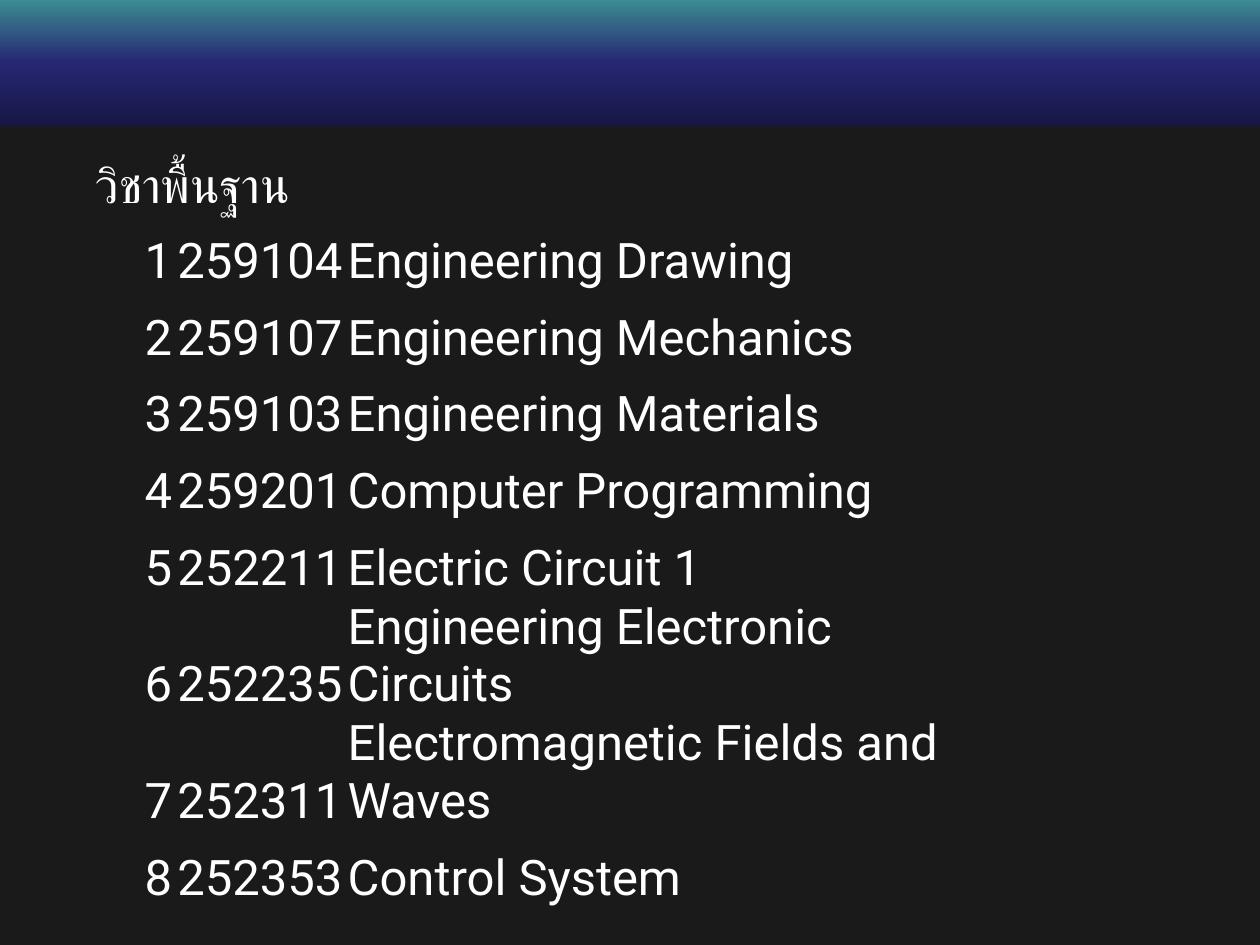
from copy import deepcopy

from pptx import Presentation
from pptx.dml.color import RGBColor
from pptx.enum.shapes import MSO_SHAPE as Shape
from pptx.enum.text import MSO_ANCHOR as Anchor, PP_ALIGN as Align
from pptx.oxml.ns import qn
from pptx.util import Cm, Pt
from lxml.etree import SubElement, Element

COLORS = {
    "background": "1A1A1A",
    "band_top": "3C8C93",
    "band_middle": "262673",
    "band_bottom": "171745",
    "text": "FFFFFF",
}
FONT = "Roboto"
HEADING = "วิชาพื้นฐาน"
COURSES = [
    ("259104", "Engineering Drawing"),
    ("259107", "Engineering Mechanics"),
    ("259103", "Engineering Materials"),
    ("259201", "Computer Programming"),
    ("252211", "Electric Circuit 1"),
    ("252235", "Engineering Electronic Circuits"),
    ("252311", "Electromagnetic Fields and Waves"),
    ("252353", "Control System"),
]
COLUMN_WIDTHS = [Cm(1.6), Cm(3.48), Cm(12.9)]
COLUMN_ALIGNS = [Align.RIGHT, Align.CENTER, Align.LEFT]
ROW_HEIGHT = Cm(1.55)


def color(name):
    return RGBColor.from_string(COLORS[name])


def add_header_band(slide, width):
    band = slide.shapes.add_shape(Shape.RECTANGLE, 0, 0, width, Cm(2.54))
    band.shadow.inherit = False
    band.line.fill.background()
    band.fill.gradient()
    band.fill.gradient_angle = 270
    # A new gradient has two stops; the band needs a third
    first_stop = band.fill.gradient_stops[0]._gs
    first_stop.addnext(deepcopy(first_stop))
    stops = zip(band.fill.gradient_stops, (0, 0.5, 1),
                ("band_top", "band_middle", "band_bottom"))
    for stop, position, name in stops:
        stop.position = position
        stop.color.rgb = color(name)


def remove_borders(cell):
    properties = cell._tc.get_or_add_tcPr()
    for index, side in enumerate(("lnL", "lnR", "lnT", "lnB")):
        border = Element(qn(f"a:{side}"))
        SubElement(border, qn("a:noFill"))
        properties.insert(index, border)


def format_cell(cell):
    cell.fill.background()
    remove_borders(cell)
    cell.vertical_anchor = Anchor.BOTTOM
    cell.margin_left = cell.margin_right = cell.margin_top = Cm(0.03)
    cell.margin_bottom = 0


def write_cell(cell, text, align=Align.LEFT):
    paragraph = cell.text_frame.paragraphs[0]
    paragraph.alignment = align
    run = paragraph.add_run()
    run.text = text
    run.font.name = FONT
    run.font.size = Pt(28)
    run.font.bold = False
    run.font.color.rgb = color("text")


def add_course_table(slide):
    row_count = len(COURSES) + 1
    table = slide.shapes.add_table(
        row_count, len(COLUMN_WIDTHS), Cm(1.9), Cm(2.75),
        sum(COLUMN_WIDTHS), ROW_HEIGHT * row_count).table
    table.first_row = table.horz_banding = False
    for column, width in zip(table.columns, COLUMN_WIDTHS):
        column.width = width
    for row in table.rows:
        row.height = ROW_HEIGHT
    for cell in table.iter_cells():
        format_cell(cell)

    # Heading across the number and code columns
    table.cell(0, 0).merge(table.cell(0, 1))
    write_cell(table.cell(0, 0), HEADING)

    # Numbered courses
    for number, course in enumerate(COURSES, start=1):
        for column, text in enumerate((str(number), *course)):
            write_cell(table.cell(number, column), text, COLUMN_ALIGNS[column])


def main():
    presentation = Presentation()
    presentation.slide_width = Cm(25.4)
    presentation.slide_height = Cm(19.05)
    slide = presentation.slides.add_slide(presentation.slide_layouts[6])
    slide.background.fill.solid()
    slide.background.fill.fore_color.rgb = color("background")

    add_header_band(slide, presentation.slide_width)
    add_course_table(slide)
    presentation.save("out.pptx")


if __name__ == "__main__":
    main()
